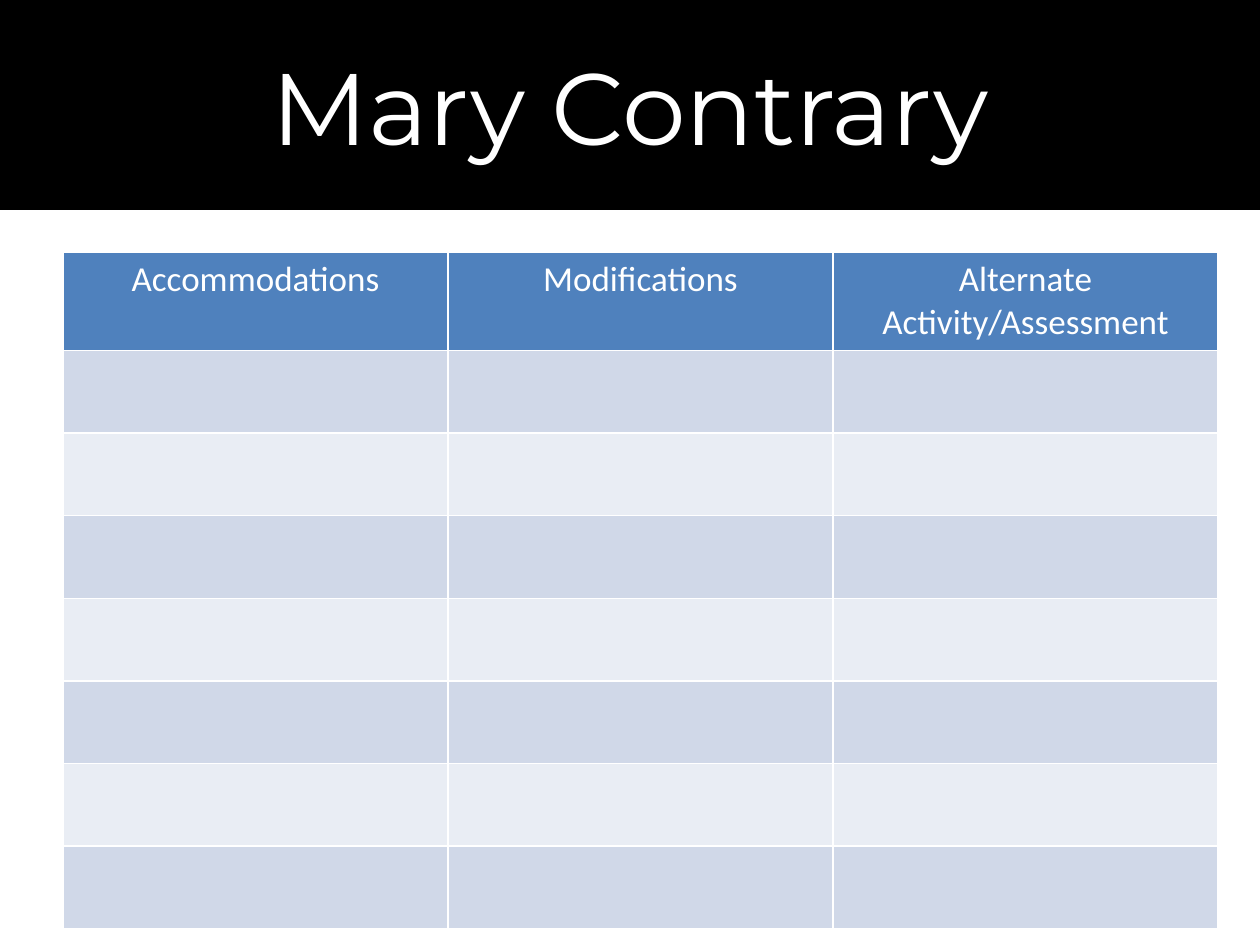
from pptx import Presentation
from pptx import util as u
from pptx.dml.color import RGBColor
from pptx.enum import text

COLORS = {
    "banner": "000000",
    "light_text": "FFFFFF",
    "header": "4F81BD",
    "band_dark": "D0D8E8",
    "band_light": "E9EDF4",
}


class SupportPlan:
    def __init__(self, presentation):
        self.slide = presentation.slides.add_slide(presentation.slide_layouts[5])

    def paint(self, fill, color):
        fill.solid()
        fill.fore_color.rgb = RGBColor.from_string(COLORS[color])

    def set_words(self, frame, words, font_name, size):
        frame.text = words
        paragraph = frame.paragraphs[0]
        paragraph.alignment = text.PP_ALIGN.CENTER
        font = paragraph.font
        font.name, font.size, font.bold = font_name, u.Pt(size), False
        font.color.rgb = RGBColor.from_string(COLORS["light_text"])

    def banner(self, student, width, height):
        title = self.slide.shapes.title
        title.left, title.top = u.Pt(0), u.Pt(0)
        title.width, title.height = u.Pt(width), u.Pt(height)
        self.paint(title.fill, "banner")
        title.text_frame.vertical_anchor = text.MSO_ANCHOR.MIDDLE
        self.set_words(title.text_frame, student, "Montserrat", 58)

    def support_table(self, headings, blank_rows, left, top, width, header_height, row_height):
        table = self.slide.shapes.add_table(
            blank_rows + 1, len(headings), u.Pt(left), u.Pt(top),
            u.Pt(width), u.Pt(header_height + blank_rows * row_height),
        ).table
        for column in table.columns:
            column.width = u.Pt(width / len(headings))
        for index, row in enumerate(table.rows):
            row.height = u.Pt(row_height if index else header_height)
            band = "band_dark" if index % 2 else "band_light"
            for cell in row.cells:
                self.paint(cell.fill, band if index else "header")
        for cell, heading in zip(table.rows[0].cells, headings):
            self.set_words(cell.text_frame, heading, "Calibri", 20)


def main():
    presentation = Presentation()
    presentation.slide_width, presentation.slide_height = u.Pt(720), u.Pt(540)
    plan = SupportPlan(presentation)
    plan.banner("Mary Contrary", 720, 120)
    plan.support_table(
        ["Accommodations", "Modifications", "Alternate Activity/Assessment"],
        blank_rows=7, left=36, top=144, width=660, header_height=48, row_height=47.25,
    )
    presentation.save("out.pptx")


if __name__ == "__main__":
    main()
